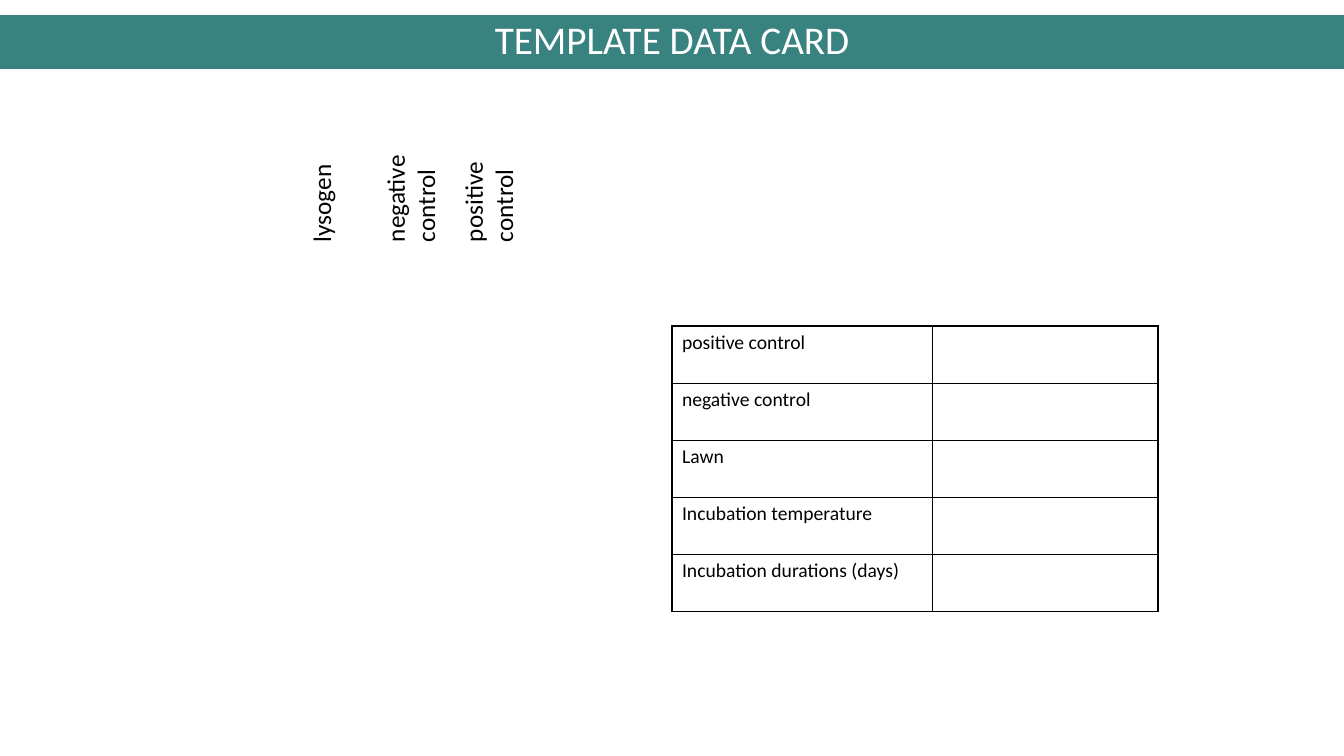
"""Build the template data card slide."""
from lxml import etree
from pptx import Presentation, util as u
from pptx.dml.color import RGBColor
from pptx.enum import shapes, text
from pptx.oxml.ns import qn

SCALE = 914400 / 100.8
TITLE = "TEMPLATE DATA CARD"
ROWS = ["positive control", "negative control", "Lawn",
        "Incubation temperature", "Incubation durations (days)"]
LABELS = [("lysogen", 321, 40), ("negative control", 410, 70),
          ("positive control", 488, 70)]
COLS = [260, 226]
ROW = 57
LONG, BASE = 115, 252


def px(n):
    return u.Emu(round(n * SCALE))


def box(*vals):
    return [px(v) for v in vals]


def color(code):
    return RGBColor.from_string(code)


def write(frame, words, size, code="000000", **form):
    para = frame.paragraphs[0]
    para.text = words
    para.font.color.rgb = color(code)
    for key, val in {"name": "Calibri", "size": u.Pt(size)}.items():
        setattr(para.font, key, val)
    for key, val in form.items():
        setattr(para, key, val)


def edge(cell, side, width):
    line = etree.SubElement(cell._tc.get_or_add_tcPr(), qn("a:ln" + side),
                            w=str(u.Pt(width)))
    fill = etree.SubElement(line, qn("a:solidFill"))
    etree.SubElement(fill, qn("a:srgbClr"), val="000000")


def banner(slide):
    bar = slide.shapes.add_shape(shapes.MSO_SHAPE.RECTANGLE, *box(0, 15, 1344, 54))
    bar.shadow.inherit = False
    bar.fill.solid()
    bar.fill.fore_color.rgb = color("38837F")
    bar.line.fill.background()
    bar.text_frame.vertical_anchor = text.MSO_ANCHOR.MIDDLE
    write(bar.text_frame, TITLE, 28, "FFFFFF",
          alignment=text.PP_ALIGN.CENTER, line_spacing=0.9)


def grid(slide):
    spot = box(672, 326, sum(COLS), ROW * len(ROWS))
    table = slide.shapes.add_table(len(ROWS), len(COLS), *spot).table
    for key in ("first_row", "horz_banding"):
        setattr(table, key, False)
    for col, width in zip(table.columns, COLS):
        col.width = px(width)
    for r, words in enumerate(ROWS):
        table.rows[r].height = px(ROW)
        for c, entry in enumerate([words, ""]):
            cell = table.cell(r, c)
            thick = {"L": c == 0, "R": c == 1, "T": r == 0, "B": False}
            for side, bold in thick.items():
                edge(cell, side, 1 if bold else 0.5)
            cell.fill.background()
            write(cell.text_frame, entry, 14)


def label(slide, words, mid, deep):
    left, top = mid - LONG / 2, BASE - LONG / 2 - deep / 2
    note = slide.shapes.add_textbox(*box(left, top, LONG, deep))
    note.rotation = 270
    form = {"word_wrap": True, "vertical_anchor": text.MSO_ANCHOR.MIDDLE}
    for key, val in form.items():
        setattr(note.text_frame, key, val)
    write(note.text_frame, words, 18)


def main():
    deck = Presentation()
    deck.slide_width, deck.slide_height = box(1344, 756)
    slide = deck.slides.add_slide(deck.slide_layouts[6])
    banner(slide)
    grid(slide)
    for item in LABELS:
        label(slide, *item)
    deck.save("out.pptx")


if __name__ == "__main__":
    main()
